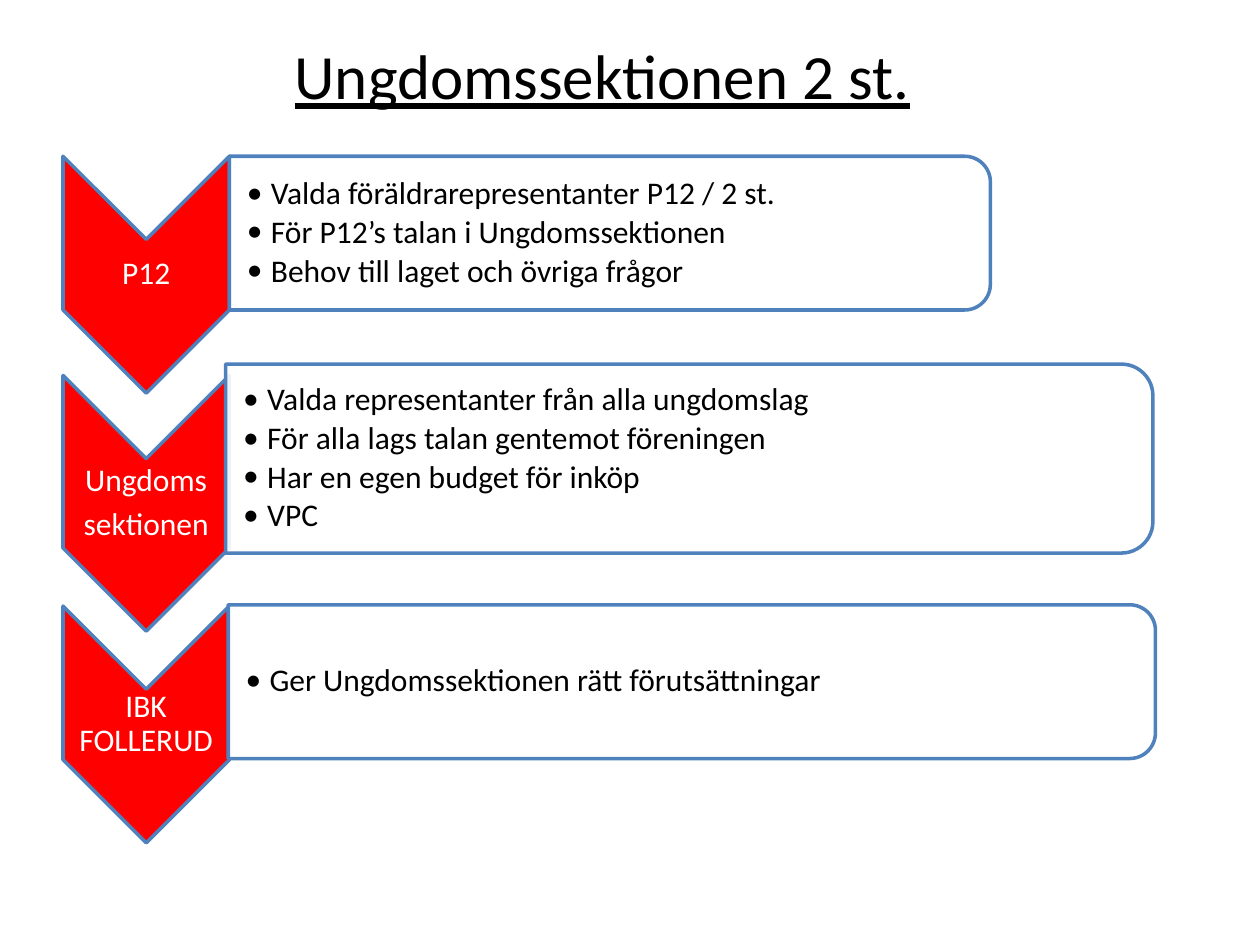
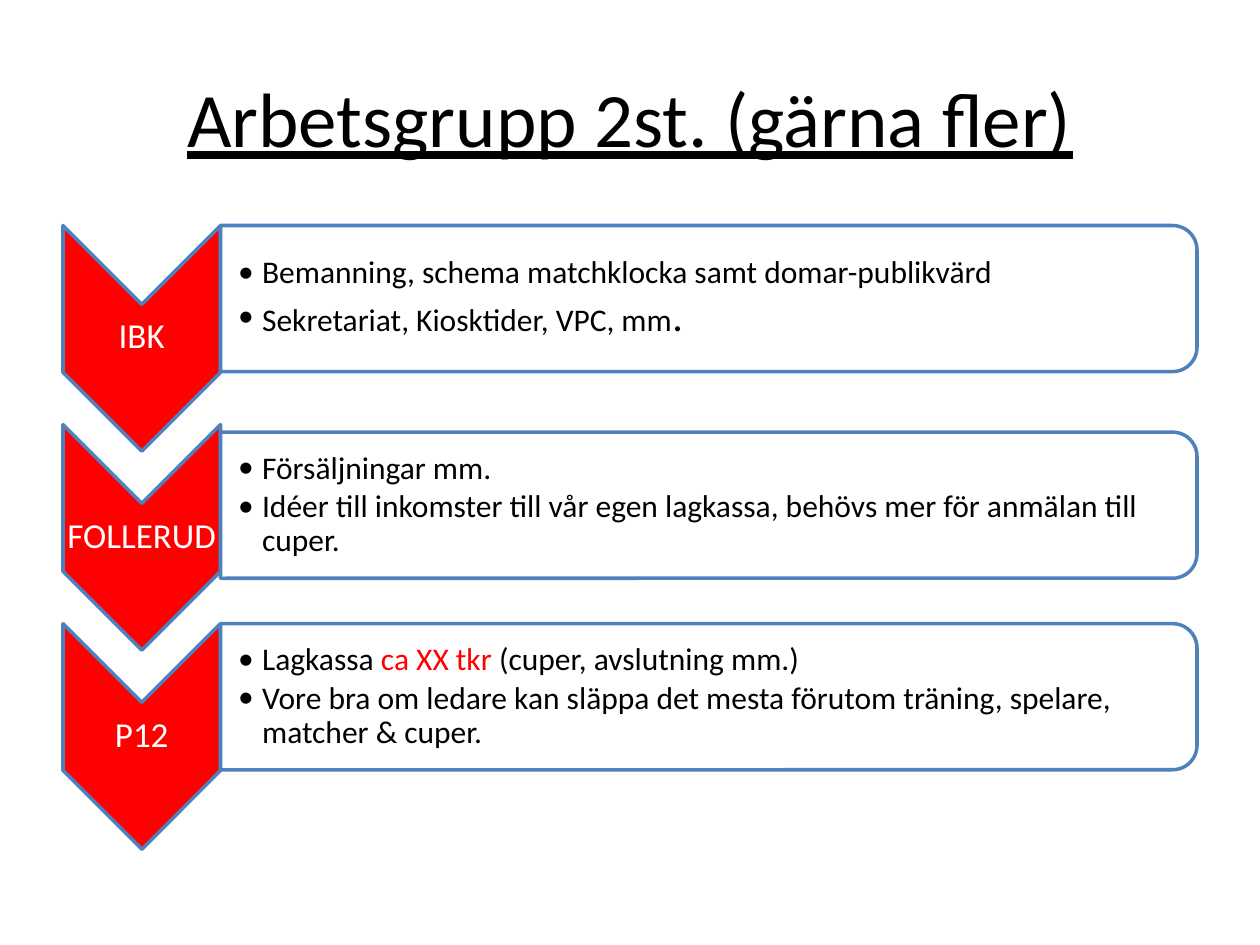
from dataclasses import dataclass
from typing import NamedTuple

from lxml import etree
from pptx import Presentation, util as u
from pptx.dml.color import RGBColor
from pptx.enum import shapes, text
from pptx.oxml.ns import qn
from pptx.shapes.autoshape import Shape
from pptx.slide import Slide
from pptx.text.text import _Paragraph as Paragraph

EMU_PER_PX = 9144  # 100 px to the inch
FONT = "Calibri"
RED = RGBColor(0xFF, 0x00, 0x00)
BLUE = RGBColor(0x4F, 0x81, 0xBD)
WHITE = RGBColor(0xFF, 0xFF, 0xFF)
BLACK = RGBColor(0x00, 0x00, 0x00)
PANEL_OPACITY = 90
CHEVRON_LEFT = 50
BULLET_INDENT = 19
BODY_SIZE = 18


class Box(NamedTuple):
    left: int
    top: int
    width: int
    height: int


class Insets(NamedTuple):
    left: int
    top: int
    right: int
    bottom: int


class Run(NamedTuple):
    text: str
    size: int = BODY_SIZE
    color: RGBColor = BLACK


class Style(NamedTuple):
    size: int
    color: RGBColor = BLACK
    align: text.PP_ALIGN = text.PP_ALIGN.LEFT
    underline: bool = False
    line_spacing: float = 1.0
    space_after: float = 0
    bullet: bool = False


TITLE_INSETS = Insets(10, 5, 10, 5)
LABEL_INSETS = Insets(1, 1, 1, 1)
PANEL_INSETS = Insets(14, 1, 1, 1)
PANEL_STYLE = Style(BODY_SIZE, line_spacing=0.9, space_after=2.7, bullet=True)

Line = str | tuple[Run, ...]


@dataclass(frozen=True)
class Step:
    """A chevron with its label, and the panel of bullets beside it."""
    label: tuple[str, ...]
    chevron: Box
    panel: Box
    bullets: tuple[Line, ...]


@dataclass(frozen=True)
class Page:
    title: str
    title_box: Box
    title_style: Style
    title_anchor: text.MSO_ANCHOR
    label_size: int
    steps: tuple[Step, ...]


def px(length: float) -> u.Emu:
    return u.Emu(round(length * EMU_PER_PX))


def add_turned_shape(slide: Slide, kind: shapes.MSO_SHAPE, box: Box, fill: RGBColor) -> Shape:
    """Add a shape turned a quarter clockwise so that it covers the box."""
    left = box.left + (box.width - box.height) / 2
    top = box.top + (box.height - box.width) / 2
    shape = slide.shapes.add_shape(kind, px(left), px(top), px(box.height), px(box.width))
    shape.rotation = 90
    shape.shadow.inherit = False
    shape.fill.solid()
    shape.fill.fore_color.rgb = fill
    shape.line.color.rgb = BLUE
    shape.line.width = u.Pt(2)
    return shape


def set_opacity(shape: Shape, percent: int) -> None:
    color = shape._element.spPr.find(qn("a:solidFill"))[0]
    etree.SubElement(color, qn("a:alpha")).set("val", str(percent * 1000))


def set_bullet(paragraph: Paragraph) -> None:
    properties = paragraph._p.get_or_add_pPr()
    properties.set("marL", str(px(BULLET_INDENT)))
    properties.set("indent", str(px(-BULLET_INDENT)))
    for bullet in (etree.Element(qn("a:buFont"), typeface=FONT),
                   etree.Element(qn("a:buChar"), char="•")):
        properties.insert_element_before(bullet, "a:tabLst", "a:defRPr", "a:extLst")


def fill_paragraph(paragraph: Paragraph, line: Line, style: Style) -> None:
    paragraph.alignment = style.align
    paragraph.line_spacing = style.line_spacing
    paragraph.space_after = u.Pt(style.space_after)
    paragraph.font.name = FONT
    paragraph.font.size = u.Pt(style.size)
    paragraph.font.color.rgb = style.color
    paragraph.font.underline = style.underline
    if style.bullet:
        set_bullet(paragraph)
    if isinstance(line, str):
        paragraph.add_run().text = line
        return
    for part in line:
        run = paragraph.add_run()
        run.text = part.text
        run.font.size = u.Pt(part.size)
        run.font.color.rgb = part.color


def add_text(slide: Slide, box: Box, lines: tuple[Line, ...], style: Style, insets: Insets,
             anchor: text.MSO_ANCHOR = text.MSO_ANCHOR.MIDDLE) -> None:
    frame = slide.shapes.add_textbox(*map(px, box)).text_frame
    frame.word_wrap = True
    frame.vertical_anchor = anchor
    frame.margin_left, frame.margin_top, frame.margin_right, frame.margin_bottom = map(px, insets)
    for index, line in enumerate(lines):
        paragraph = frame.add_paragraph() if index else frame.paragraphs[0]
        fill_paragraph(paragraph, line, style)


def add_step(slide: Slide, step: Step, label_size: int) -> None:
    chevron, panel = step.chevron, step.panel
    add_turned_shape(slide, shapes.MSO_SHAPE.CHEVRON, chevron, RED)
    label_box = Box(chevron.left, chevron.top + chevron.width // 2,
                    chevron.width, chevron.height - chevron.width)
    label_style = Style(label_size, WHITE, text.PP_ALIGN.CENTER, line_spacing=0.9, space_after=6)
    add_text(slide, label_box, step.label, label_style, LABEL_INSETS)

    shape = add_turned_shape(slide, shapes.MSO_SHAPE.ROUND_2_SAME_RECTANGLE, panel, WHITE)
    set_opacity(shape, PANEL_OPACITY)
    corner = round(panel.height * 0.05)
    text_box = Box(panel.left, panel.top + corner,
                   panel.width - corner, panel.height - 2 * corner)
    add_text(slide, text_box, step.bullets, PANEL_STYLE, PANEL_INSETS)


def add_page(presentation: Presentation, page: Page) -> None:
    slide = presentation.slides.add_slide(presentation.slide_layouts[6])
    for step in page.steps:
        add_step(slide, step, page.label_size)
    add_text(slide, page.title_box, (page.title,), page.title_style, TITLE_INSETS,
             page.title_anchor)


def youth_chevron(top: int, height: int = 188) -> Box:
    return Box(CHEVRON_LEFT, top, 132, height)


def group_chevron(row: int) -> Box:
    return Box(CHEVRON_LEFT, 179 + 158 * row, 125, 179)


def group_panel(top: int) -> Box:
    return Box(175, top, 775, 116)


YOUTH_SECTION = Page(
    "Ungdomssektionen 2 st.", Box(224, 24, 646, 71),
    Style(36, underline=True), text.MSO_ANCHOR.TOP, 18,
    (
        Step(("P12",), youth_chevron(124), Box(182, 124, 604, 122), (
            "Valda föräldrarepresentanter P12 / 2 st.",
            "För P12’s talan i Ungdomssektionen",
            "Behov till laget och övriga frågor",
        )),
        Step(("Ungdoms", "sektionen"), youth_chevron(298, 203), Box(179, 289, 736, 150), (
            "Valda representanter från alla ungdomslag",
            "För alla lags talan gentemot föreningen",
            "Har en egen budget för inköp",
            "VPC",
        )),
        Step(("IBK FOLLERUD",), youth_chevron(481), Box(181, 480, 736, 122), (
            "Ger Ungdomssektionen rätt förutsättningar",
        )),
    ),
)

WORKING_GROUP = Page(
    "Arbetsgrupp 2st. (gärna fler)", Box(50, 30, 900, 125),
    Style(44, align=text.PP_ALIGN.CENTER, underline=True), text.MSO_ANCHOR.MIDDLE, 20,
    (
        Step(("IBK",), group_chevron(0), group_panel(179), (
            "Bemanning, schema matchklocka samt domar-publikvärd",
            (Run("Sekretariat, Kiosktider, VPC, mm"), Run(".", size=24)),
        )),
        Step(("FOLLERUD",), group_chevron(1), group_panel(343), (
            "Försäljningar mm.",
            "Idéer till inkomster till vår egen lagkassa, behövs mer för anmälan till cuper.",
        )),
        Step(("P12",), group_chevron(2), group_panel(495), (
            (Run("Lagkassa "), Run("ca XX tkr ", color=RED), Run("(cuper, avslutning mm.)")),
            "Vore bra om ledare kan släppa det mesta förutom träning, spelare, matcher & cuper.",
        )),
    ),
)


def main() -> None:
    presentation = Presentation()
    presentation.slide_width = px(1000)
    presentation.slide_height = px(750)
    for page in (YOUTH_SECTION, WORKING_GROUP):
        add_page(presentation, page)
    presentation.save("out.pptx")


if __name__ == "__main__":
    main()
